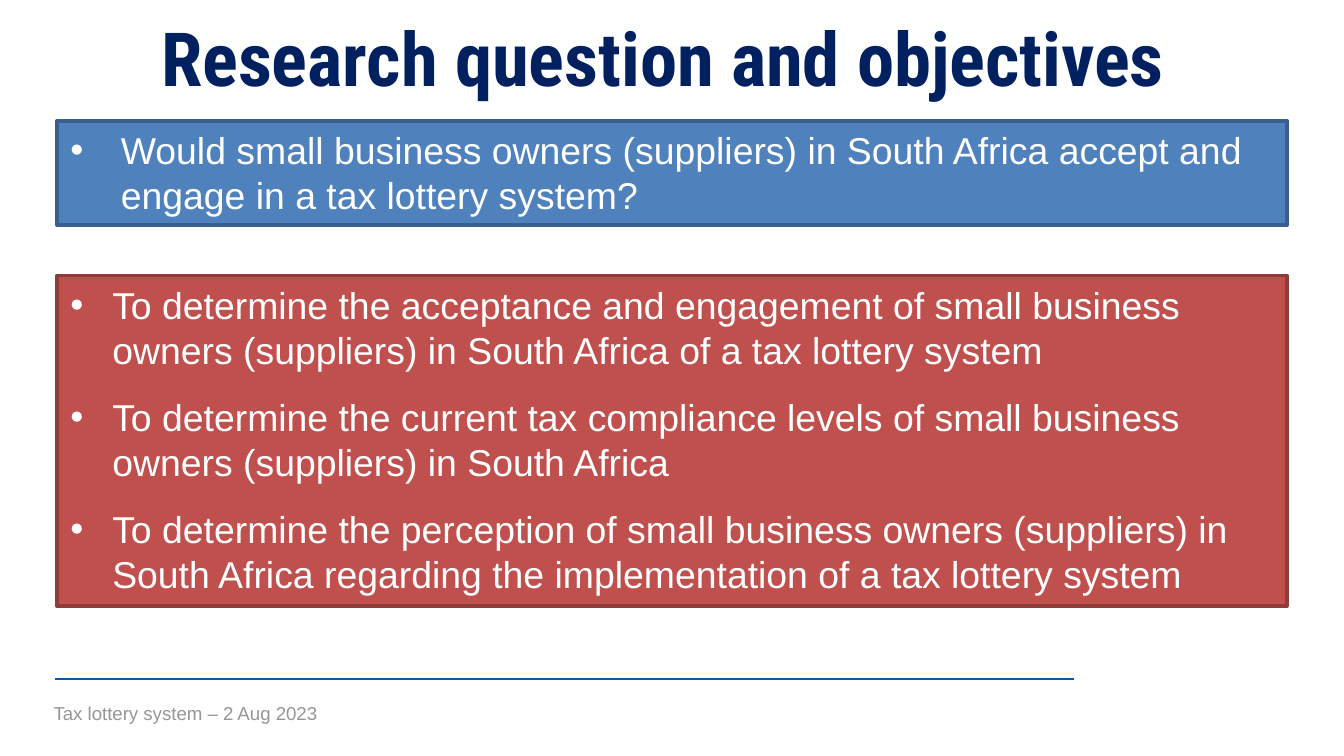
from dataclasses import dataclass

from lxml import etree
from pptx import Presentation
from pptx import util as u
from pptx.dml.color import RGBColor
from pptx.enum import shapes, text
from pptx.oxml import ns

COLORS = {
    "navy": "002060", "rule": "005BAA", "footer": "969696", "white": "FFFFFF",
    "blue": "4F81BD", "blue_edge": "3A5F8C", "red": "C0504D", "red_edge": "8E3B39",
}

# A 16:9 slide
presentation = Presentation()
presentation.slide_width = u.Inches(10)
presentation.slide_height = presentation.slide_width * 9 // 16
slide = presentation.slides.add_slide(presentation.slide_layouts[6])

# The slide is a grid of square cells, 100 columns wide
CELL = presentation.slide_width / 100


@dataclass
class Area:
    column: float
    row: float
    columns: float
    rows: float

    def lengths(self) -> list[int]:
        return [cells(n) for n in (self.column, self.row, self.columns, self.rows)]


@dataclass
class Label:
    words: str
    area: Area
    margins: tuple[float, float]
    align: text.PP_ALIGN
    font: dict


@dataclass
class Panel:
    area: Area
    fill: str
    edge: str
    indent: float
    points: list[str]
    space_after: int = 0


def cells(count: float) -> int:
    return round(count * CELL)


def color(name: str) -> RGBColor:
    return RGBColor.from_string(COLORS[name])


def set_font(paragraph, ink: str, **values) -> None:
    for name, value in values.items():
        setattr(paragraph.font, name, value)
    paragraph.font.color.rgb = color(ink)


def set_frame(frame, across: float, down: float) -> None:
    values = {
        "word_wrap": True, "vertical_anchor": text.MSO_ANCHOR.TOP,
        "margin_left": cells(across), "margin_right": cells(across),
        "margin_top": cells(down), "margin_bottom": cells(down),
    }
    for name, value in values.items():
        setattr(frame, name, value)


def add_bullet(paragraph, indent: float) -> None:
    properties = paragraph._p.get_or_add_pPr()
    properties.set("marL", str(cells(indent)))
    properties.set("indent", str(-cells(indent)))
    etree.SubElement(properties, ns.qn("a:buFont"), typeface="Arial")
    etree.SubElement(properties, ns.qn("a:buChar"), char="•")


def draw_label(label: Label) -> None:
    frame = slide.shapes.add_textbox(*label.area.lengths()).text_frame
    set_frame(frame, *label.margins)
    paragraph = frame.paragraphs[0]
    paragraph.text = label.words
    paragraph.alignment = label.align
    set_font(paragraph, **label.font)


def draw_panel(panel: Panel) -> None:
    shape = slide.shapes.add_shape(shapes.MSO_SHAPE.RECTANGLE, *panel.area.lengths())
    shape.shadow.inherit = False
    shape.fill.solid()
    shape.fill.fore_color.rgb = color(panel.fill)
    shape.line.color.rgb = color(panel.edge)
    shape.line.width = u.Pt(2)
    frame = shape.text_frame
    set_frame(frame, 1, 0.5)
    for number, point in enumerate(panel.points):
        paragraph = frame.add_paragraph() if number else frame.paragraphs[0]
        paragraph.text = point
        paragraph.alignment = text.PP_ALIGN.LEFT
        paragraph.space_after = u.Pt(panel.space_after)
        add_bullet(paragraph, panel.indent)
        set_font(paragraph, "white", name="Arial", size=u.Pt(20))


def draw_rule(column: float, end_column: float, row: float) -> None:
    rule = slide.shapes.add_connector(
        shapes.MSO_CONNECTOR.STRAIGHT,
        cells(column), cells(row), cells(end_column), cells(row))
    rule.line.color.rgb = color("rule")
    rule.line.width = u.Pt(1)
    etree.SubElement(rule._element.spPr, ns.qn("a:effectLst"))


# Footer rule and text
draw_rule(4.1, 79.9, 50.5)
draw_label(Label(
    "Tax lottery system – 2 Aug 2023", Area(3, 51.75, 76.9, 2.7), (1, 0.5),
    text.PP_ALIGN.LEFT, {"ink": "footer", "name": "Arial", "size": u.Pt(10)}))

# Title
draw_label(Label(
    "Research question and objectives", Area(-1.4, 0.65, 101.4, 7.2), (0.5, 0.2),
    text.PP_ALIGN.CENTER,
    {"ink": "navy", "name": "Roboto Condensed", "size": u.Pt(40), "bold": True}))

# Research question, then objectives
PANELS = [
    Panel(Area(4.25, 9, 91.5, 7.75), "blue", "blue_edge", 3.75, [
        "Would small business owners (suppliers) in South Africa accept and "
        "engage in a tax lottery system?",
    ]),
    Panel(Area(4.25, 20.5, 91.5, 24.6), "red", "red_edge", 3.12, [
        "To determine the acceptance and engagement of small business owners "
        "(suppliers) in South Africa of a tax lottery system",
        "To determine the current tax compliance levels of small business owners "
        "(suppliers) in South Africa",
        "To determine the perception of small business owners (suppliers) in "
        "South Africa regarding the implementation of a tax lottery system",
    ], space_after=12),
]
for panel in PANELS:
    draw_panel(panel)

presentation.save("out.pptx")
